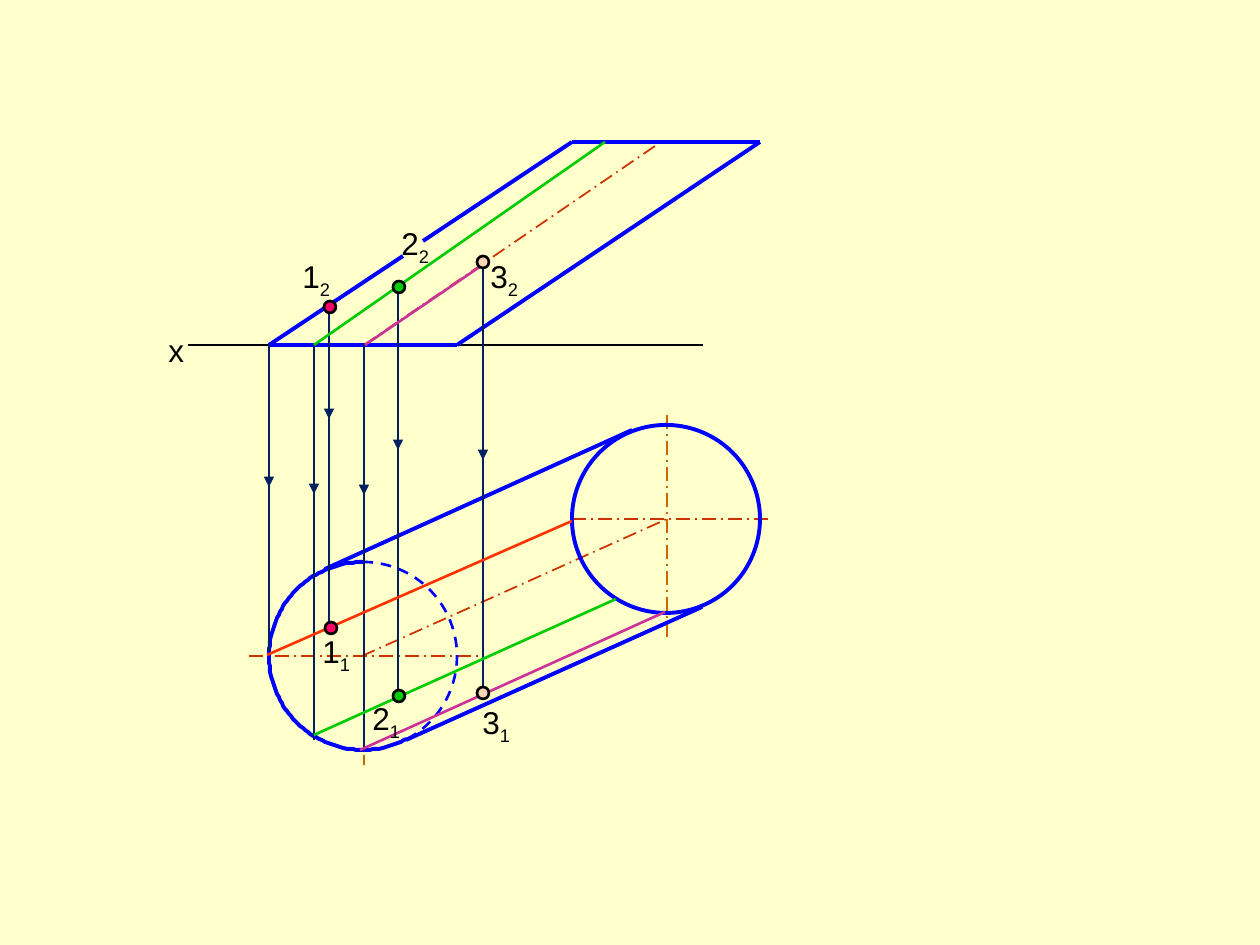
import math
from lxml import etree
from pptx import Presentation
from pptx import util as u
from pptx.dml.color import RGBColor
from pptx.enum import dml, shapes, text
from pptx.oxml.ns import qn

PX = u.Inches(10) / 1260
COLORS = {
    "background": "FFFFCC", "outline": "0000FF", "ink": "000000",
    "projection": "002060", "axis": "CC3300", "upright": "CC6600",
    "red": "FF3300", "green": "00CC00", "violet": "CC3399",
    "dot 1": "FF0066", "dot 2": "00CC00", "dot 3": "FCD5B5",
}
DASH_DOT = dml.MSO_LINE.LONG_DASH_DOT


def px(*lengths):
    return [u.Emu(round(length * PX)) for length in lengths]


def draw_line(x1, y1, x2, y2, color, width, dash=None, arrow=False):
    line = page.shapes.add_connector(
        shapes.MSO_CONNECTOR.STRAIGHT, *px(x1, y1, x2, y2))
    line.line.color.rgb = RGBColor.from_string(COLORS[color])
    line.line.width = u.Pt(width)
    if dash:
        line.line.dash_style = dash
    properties = line._element.spPr
    if arrow:
        etree.SubElement(properties.find(qn("a:ln")), qn("a:tailEnd"), type="triangle")
    etree.SubElement(properties, qn("a:effectLst"))


deck = Presentation()
deck.slide_width, deck.slide_height = px(1260, 945)
page = deck.slides.add_slide(deck.slide_layouts[6])
page.background.fill.solid()
page.background.fill.fore_color.rgb = RGBColor.from_string(COLORS["background"])

# Centre lines of the cylinder in both views
for x1, y1, x2, y2, color in [
    (362, 656, 667, 519, "axis"), (364, 547, 364, 765, "upright"),
    (667, 415, 667, 639, "upright"), (364, 345, 661, 142, "axis"),
    (249, 656, 481, 656, "axis"), (572, 519, 769, 519, "axis"),
]:
    draw_line(x1, y1, x2, y2, color, 1, DASH_DOT)

# Bases in the top view: the hidden edge is dashed
for left, top, width, dash in [(269, 562, 1.5, dml.MSO_LINE.DASH), (572, 425, 2.25, None)]:
    base = page.shapes.add_shape(shapes.MSO_SHAPE.OVAL, *px(left, top, 188, 188))
    base.shadow.inherit = False
    base.fill.background()
    base.line.color.rgb = RGBColor.from_string(COLORS["outline"])
    base.line.width = u.Pt(width)
    if dash:
        base.line.dash_style = dash

# Visible arc of the lower base
arc_points = [
    (363 + 94 * math.cos(math.radians(angle)), 656 + 94 * math.sin(math.radians(angle)))
    for angle in range(62, 271, 2)
]
builder = page.shapes.build_freeform(*arc_points[0], scale=PX)
builder.add_line_segments(arc_points[1:], close=False)
arc = builder.convert_to_shape()
arc.shadow.inherit = False
arc.fill.background()
arc.line.color.rgb = RGBColor.from_string(COLORS["outline"])
arc.line.width = u.Pt(2.25)

# Ground axis, then the outlines of both views
draw_line(188, 345, 703, 345, "ink", 1)
for ends in [
    (325, 569, 632, 430), (406, 740, 702, 607),
    (572, 142, 760, 142), (269, 345, 457, 345), (457, 345, 760, 142),
    (269, 345, 403, 256), (423, 241, 572, 142),
]:
    draw_line(*ends, "outline", 2.25)

# Projection lines, each with an arrow 54 px long
for x, top, bottom, arrow_top in [
    (269, 345, 651, 433), (314, 345, 740, 440), (329, 311, 622, 365),
    (364, 343, 750, 441), (398, 291, 693, 396), (483, 266, 693, 406),
]:
    draw_line(x, top, x, bottom, "projection", 1)
    draw_line(x, arrow_top, x, arrow_top + 54, "projection", 1.5, arrow=True)

# Generators through the three points
for x1, y1, x2, y2, color in [
    (314, 345, 605, 142, "green"), (481, 266, 365, 345, "violet"),
    (267, 655, 572, 521, "red"), (314, 735, 616, 599, "green"),
    (360, 750, 665, 612, "violet"),
]:
    draw_line(x1, y1, x2, y2, color, 1.5)

# Points, by centre
for x, y, color in [
    (330, 307, "dot 1"), (399, 287, "dot 2"), (483, 262, "dot 3"),
    (331, 628, "dot 1"), (399, 696, "dot 2"), (483, 693, "dot 3"),
]:
    dot = page.shapes.add_shape(shapes.MSO_SHAPE.OVAL, *px(x - 6, y - 6, 12, 12))
    dot.shadow.inherit = False
    dot.fill.solid()
    dot.fill.fore_color.rgb = RGBColor.from_string(COLORS[color])
    dot.line.color.rgb = RGBColor.from_string(COLORS["ink"])
    dot.line.width = u.Pt(1.5)

# Labels: name and subscript of the view
for left, top, name, view in [
    (310, 626, "1", "1"), (360, 693, "2", "1"), (470, 697, "3", "1"),
    (290, 251, "1", "2"), (389, 218, "2", "2"), (478, 251, "3", "2"),
    (156, 325, "х", ""),
]:
    box = page.shapes.add_textbox(*px(left, top, 54 if view else 42, 50))
    box.text_frame.word_wrap = False
    box.text_frame.auto_size = text.MSO_AUTO_SIZE.SHAPE_TO_FIT_TEXT
    para = box.text_frame.paragraphs[0]
    para.font.name = "Arial"
    para.font.size = u.Pt(18)
    para.font.color.rgb = RGBColor.from_string(COLORS["ink"])
    para.add_run().text = name
    if view:
        span = para.add_run()
        span.text = view
        span._r.get_or_add_rPr().set("baseline", "-25000")

deck.save("out.pptx")
